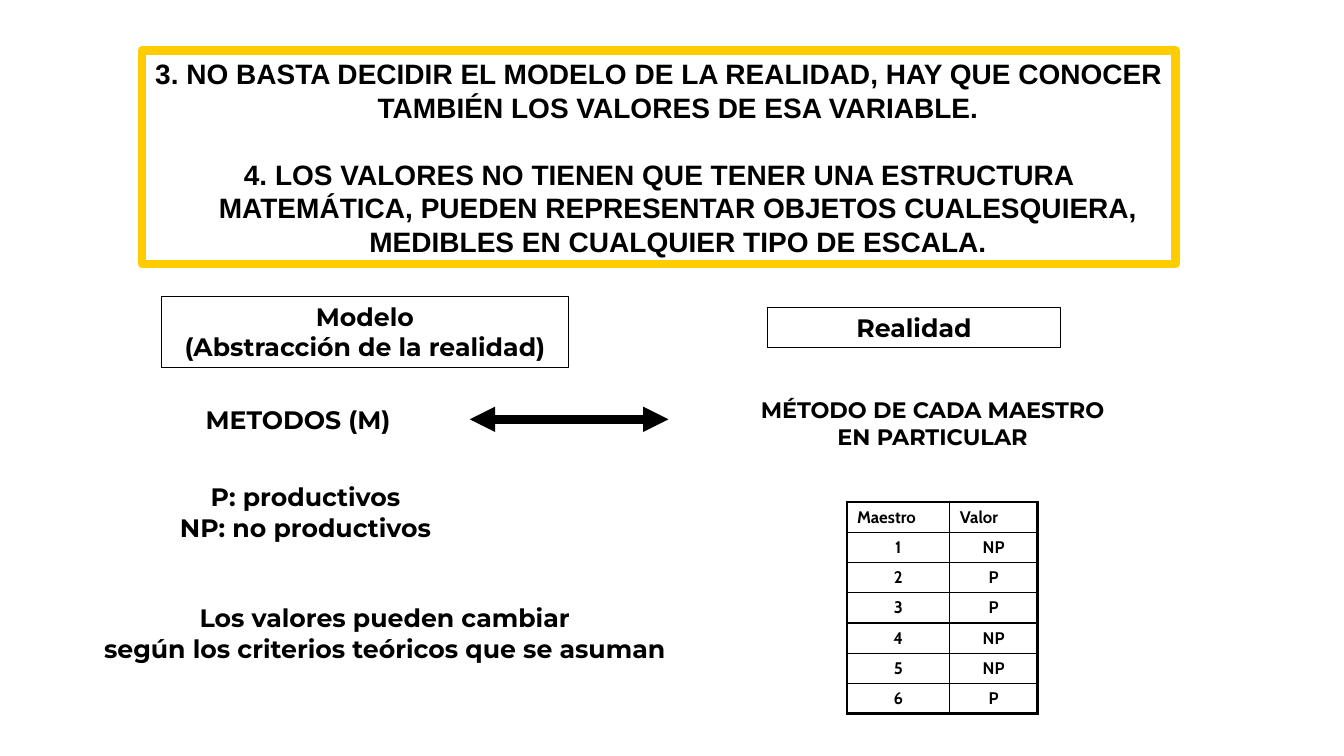
from dataclasses import dataclass

from lxml import etree
from pptx import Presentation
from pptx import util as u
from pptx.dml.color import RGBColor
from pptx.enum import shapes, text
from pptx.oxml.ns import qn

PX = 9144  # one hundredth of an inch
BLACK = RGBColor(0, 0, 0)
WHITE = RGBColor(255, 255, 255)
GOLD = RGBColor(255, 204, 0)
CENTER = text.PP_ALIGN.CENTER
LEFT = text.PP_ALIGN.LEFT
THICK, THIN = 2.25, 1


@dataclass(frozen=True)
class Label:
    lines: tuple[str, ...]
    left: int
    top: int
    width: int
    height: int
    size: int = 18
    framed: bool = False
    align: int = CENTER


STATEMENTS = (
    "3. NO BASTA DECIDIR EL MODELO DE LA REALIDAD, HAY QUE CONOCER "
    "TAMBIÉN LOS VALORES DE ESA VARIABLE.",
    "4. LOS VALORES NO TIENEN QUE TENER UNA ESTRUCTURA MATEMÁTICA, PUEDEN "
    "REPRESENTAR OBJETOS CUALESQUIERA, MEDIBLES EN CUALQUIER TIPO DE ESCALA.",
)
LABELS = (
    Label(("Modelo", "(Abstracción de la realidad)"), 160, 294, 404, 71, framed=True),
    Label(("Realidad",), 761, 305, 291, 40, framed=True),
    Label(("MÉTODO DE CADA MAESTRO", "EN PARTICULAR"), 737, 388, 376, 64, size=16),
    Label(("METODOS (M)",), 194, 396, 219, 40, align=LEFT),
    Label(("Los valores pueden cambiar", "según los criterios teóricos que se asuman"),
          74, 593, 615, 71),
    Label(("P: productivos", "NP: no productivos"), 164, 473, 278, 70),
)
TEACHERS = (("Maestro", "Valor"), ("1", "NP"), ("2", "P"), ("3", "P"),
            ("4", "NP"), ("5", "NP"), ("6", "P"))
COLUMN_WIDTHS = (102, 87)
ROW_HEIGHT = 30


def px(*lengths: int) -> list[u.Emu]:
    return [u.Emu(length * PX) for length in lengths]


def format_text(frame, font: str, size: int, align: int) -> None:
    for para in frame.paragraphs:
        para.alignment = align
        for span in para.runs:
            span.font.name = font
            span.font.size = u.Pt(size)
            span.font.bold = True
            span.font.color.rgb = BLACK


def fill_statement_box(box) -> None:
    box.left, box.top, box.width, box.height = px(141, 50, 1025, 212)
    box.fill.solid()
    box.fill.fore_color.rgb = WHITE
    box.line.color.rgb = GOLD
    box.line.width = u.Pt(6)
    frame = box.text_frame
    frame.text = "\n".join(STATEMENTS)
    frame.auto_size = text.MSO_AUTO_SIZE.NONE
    frame.word_wrap = True
    frame.vertical_anchor = text.MSO_ANCHOR.MIDDLE
    format_text(frame, "Arial", 20, CENTER)
    for para in frame.paragraphs:
        para.line_spacing = u.Pt(24)
        properties = para._p.get_or_add_pPr()
        properties.set("marL", str(38 * PX))
        properties.set("indent", str(-38 * PX))
    frame.paragraphs[1].space_before = u.Pt(24)


def add_label(page, label: Label) -> None:
    box = page.shapes.add_textbox(*px(label.left, label.top, label.width, label.height))
    box.text_frame.text = "\n".join(label.lines)
    box.text_frame.word_wrap = label.framed and len(label.lines) == 1
    format_text(box.text_frame, "Montserrat", label.size, label.align)
    if label.framed:
        box.line.color.rgb = BLACK
        box.line.width = u.Pt(0.75)


def add_double_arrow(page) -> None:
    arrow = page.shapes.add_connector(shapes.MSO_CONNECTOR.STRAIGHT, *px(466, 416, 663, 416))
    arrow.line.color.rgb = BLACK
    arrow.line.width = u.Pt(6)
    line = arrow.line._get_or_add_ln()
    for end in ("a:headEnd", "a:tailEnd"):
        etree.SubElement(line, qn(end), type="triangle")
    etree.SubElement(arrow._element.spPr, qn("a:effectLst"))


def set_borders(cell, widths: dict[str, float]) -> None:
    """Borders come before the fill in a cell, so call this ahead of filling."""
    properties = cell._tc.get_or_add_tcPr()
    for side, width in widths.items():
        border = etree.SubElement(properties, qn(f"a:{side}"), w=str(u.Pt(width)))
        fill = etree.SubElement(border, qn("a:solidFill"))
        etree.SubElement(fill, qn("a:srgbClr"), val=str(BLACK))


def add_teacher_table(page) -> None:
    rows, columns = len(TEACHERS), len(COLUMN_WIDTHS)
    table = page.shapes.add_table(
        rows, columns, *px(840, 498, sum(COLUMN_WIDTHS), rows * ROW_HEIGHT)).table
    table.first_row = table.horz_banding = False
    for column, width in zip(table.columns, px(*COLUMN_WIDTHS)):
        column.width = width
    for r, values in enumerate(TEACHERS):
        table.rows[r].height = u.Emu(ROW_HEIGHT * PX)
        for c, value in enumerate(values):
            cell = table.cell(r, c)
            cell.text_frame.text = value
            cell.margin_top = cell.margin_bottom = u.Emu(3 * PX)
            cell.vertical_anchor = text.MSO_ANCHOR.MIDDLE
            format_text(cell.text_frame, "Cabin", 12, CENTER if r else LEFT)
            set_borders(cell, {
                "lnL": THICK if c == 0 else THIN,
                "lnR": THICK if c == columns - 1 else THIN,
                "lnT": THICK if r == 0 else THIN,
                "lnB": THICK if r == rows - 1 else THIN,
            })
            cell.fill.background()


def main() -> None:
    deck = Presentation()
    deck.slide_width, deck.slide_height = px(1333, 750)
    page = deck.slides.add_slide(deck.slide_layouts[5])
    fill_statement_box(page.shapes.title)
    for label in LABELS:
        add_label(page, label)
    add_double_arrow(page)
    add_teacher_table(page)
    deck.save("out.pptx")


if __name__ == "__main__":
    main()
